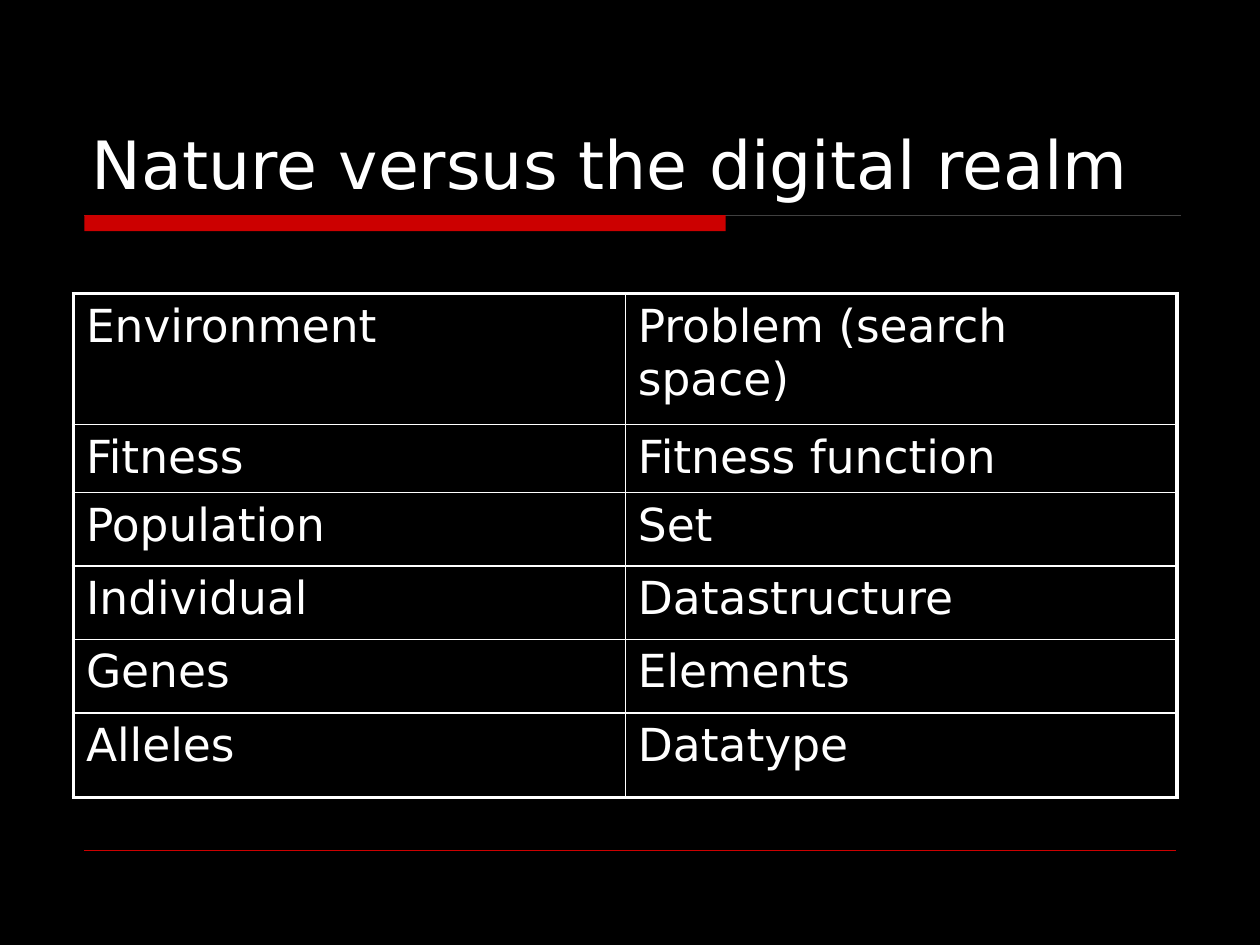
from lxml.etree import SubElement
from pptx import Presentation
from pptx.dml.color import RGBColor
from pptx.enum.shapes import MSO_CONNECTOR, MSO_SHAPE
from pptx.enum.text import MSO_ANCHOR, PP_ALIGN
from pptx.oxml.ns import qn
from pptx.util import Cm, Pt

FONT = "DejaVu Sans"
BLACK, WHITE, RED, GREY = "000000", "FFFFFF", "CC0000", "404040"
INNER_BORDER, OUTER_BORDER = 1, 2.25
ROW_HEIGHTS = [2.64, 1.37, 1.48, 1.48, 1.48, 1.71]
ANALOGIES = [
    ("Environment", "Problem (search space)"),
    ("Fitness", "Fitness function"),
    ("Population", "Set"),
    ("Individual", "Datastructure"),
    ("Genes", "Elements"),
    ("Alleles", "Datatype"),
]


def set_color(color_format, value):
    color_format.rgb = RGBColor.from_string(value)


def set_fill(fill, value):
    fill.solid()
    set_color(fill.fore_color, value)


def format_text(text_frame, size):
    for paragraph in text_frame.paragraphs:
        paragraph.alignment = PP_ALIGN.LEFT
        paragraph.font.name = FONT
        paragraph.font.size = Pt(size)
        set_color(paragraph.font.color, WHITE)


def add_title(slide, text):
    title = slide.shapes.title
    title.left, title.top = Cm(1.6), Cm(0.84)
    title.width, title.height = Cm(22.23), Cm(3.38)
    title.text_frame.text = text
    title.text_frame.vertical_anchor = MSO_ANCHOR.BOTTOM
    format_text(title.text_frame, 38)


def add_rule(slide, left, right, top, color, width):
    rule = slide.shapes.add_connector(
        MSO_CONNECTOR.STRAIGHT, Cm(left), Cm(top), Cm(right), Cm(top))
    set_color(rule.line.color, color)
    rule.line.width = Pt(width)
    SubElement(rule._element.spPr, qn("a:effectLst"))


def add_bar(slide, left, top, width, height):
    bar = slide.shapes.add_shape(
        MSO_SHAPE.RECTANGLE, Cm(left), Cm(top), Cm(width), Cm(height))
    bar.shadow.inherit = False
    set_fill(bar.fill, RED)
    bar.line.fill.background()


def set_borders(cell, widths):
    """Draw white borders; widths maps each side (L, R, T, B) to points."""
    properties = cell._tc.get_or_add_tcPr()
    for position, (side, width) in enumerate(widths.items()):
        line = SubElement(properties, qn(f"a:ln{side}"), w=str(Pt(width)))
        fill = SubElement(line, qn("a:solidFill"))
        SubElement(fill, qn("a:srgbClr"), val=WHITE)
        properties.insert(position, line)


def add_analogy_table(slide):
    row_count, column_count = len(ANALOGIES), len(ANALOGIES[0])
    table = slide.shapes.add_table(
        row_count, column_count, Cm(1.48), Cm(5.92),
        Cm(22.25), Cm(sum(ROW_HEIGHTS))).table
    table.first_row = table.horz_banding = False
    for row, height in zip(table.rows, ROW_HEIGHTS):
        row.height = Cm(height)
    for row_index, texts in enumerate(ANALOGIES):
        for column_index, text in enumerate(texts):
            cell = table.cell(row_index, column_index)
            cell.text = text
            format_text(cell.text_frame, 26)
            set_fill(cell.fill, BLACK)
            on_edge = {
                "L": column_index == 0,
                "R": column_index == column_count - 1,
                "T": row_index == 0,
                "B": row_index == row_count - 1,
            }
            set_borders(cell, {
                side: OUTER_BORDER if outer else INNER_BORDER
                for side, outer in on_edge.items()})


def main():
    presentation = Presentation()
    presentation.slide_width, presentation.slide_height = Cm(25.4), Cm(19.05)
    slide = presentation.slides.add_slide(presentation.slide_layouts[5])
    set_fill(slide.background.fill, BLACK)
    add_rule(slide, 1.7, 23.8, 4.34, GREY, 0.25)
    add_bar(slide, 1.7, 4.34, 12.93, 0.32)
    add_rule(slide, 1.7, 23.7, 17.15, RED, 0.25)
    add_analogy_table(slide)
    add_title(slide, "Nature versus the digital realm")
    presentation.save("out.pptx")


if __name__ == "__main__":
    main()
